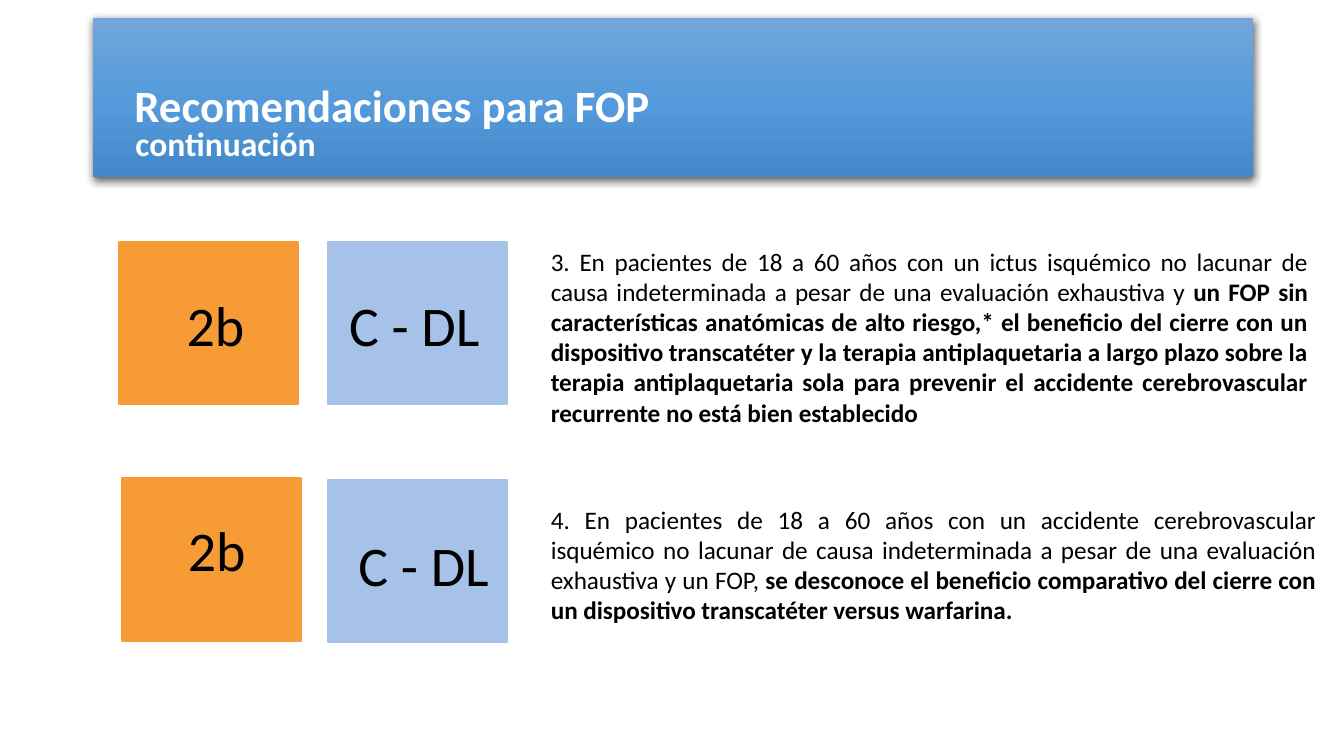
from lxml import etree
from pptx import Presentation
from pptx.dml.color import RGBColor
from pptx.enum.shapes import MSO_SHAPE
from pptx.enum.text import MSO_ANCHOR, MSO_AUTO_SIZE, PP_ALIGN
from pptx.oxml import parse_xml
from pptx.util import Pt

RECTANGLE = MSO_SHAPE.RECTANGLE
TOP = MSO_ANCHOR.TOP
NO_AUTOFIT = MSO_AUTO_SIZE.NONE
LEFT, JUSTIFY = PP_ALIGN.LEFT, PP_ALIGN.JUSTIFY

FONT = "Calibri"
WHITE = RGBColor(0xFF, 0xFF, 0xFF)
BLACK = RGBColor(0, 0, 0)
ORANGE = RGBColor(0xF7, 0x9B, 0x36)
LIGHT_BLUE = RGBColor(0xA6, 0xC2, 0xE9)
BANNER_STOPS = [
    (0, RGBColor(0x71, 0xA6, 0xDB)),
    (50, RGBColor(0x55, 0x9B, 0xDB)),
    (100, RGBColor(0x44, 0x8A, 0xCA)),
]
DRAWING = "http://schemas.openxmlformats.org/drawingml/2006/main"

BADGE_WIDTH, BADGE_HEIGHT = 95.8, 87.1
LEVEL_LEFT, TEXT_LEFT = 175.7, 288

# Offsets are measured from the top left of each recommendation
RECOMMENDATIONS = [
    dict(
        box=(64, 129.6, 643.8, 105.1),
        grade_offset=(28.9, 22.3), level_offset=(116, 22.3),
        level_badge_drop=0, text_drop=-1.4,
        plain="3. En pacientes de 18 a 60 años con un ictus isquémico no lacunar de "
              "causa indeterminada a pesar de una evaluación exhaustiva y ",
        strong="un FOP sin características anatómicas de alto riesgo,* el beneficio del "
               "cierre con un dispositivo transcatéter y la terapia antiplaquetaria a "
               "largo plazo sobre la terapia antiplaquetaria sola para prevenir el "
               "accidente cerebrovascular recurrente no está bien establecido",
    ),
    dict(
        box=(65.5, 256.2, 646.6, 72.7),
        grade_offset=(28.1, 16.7), level_offset=(119.5, 24.6),
        level_badge_drop=0.8, text_drop=10.2,
        plain="4. En pacientes de 18 a 60 años con un accidente cerebrovascular "
              "isquémico no lacunar de causa indeterminada a pesar de una evaluación "
              "exhaustiva y un FOP, ",
        strong="se desconoce el beneficio comparativo del cierre con un dispositivo "
               "transcatéter versus warfarina.",
    ),
]


def place(shape, box):
    shape.left, shape.top, shape.width, shape.height = (Pt(v) for v in box)


def write(shape, runs, size, color=BLACK, align=LEFT):
    """Fill a shape with one paragraph of (text, bold) runs."""
    frame = shape.text_frame
    frame.word_wrap = True
    frame.auto_size = NO_AUTOFIT
    frame.vertical_anchor = TOP
    paragraph = frame.paragraphs[0]
    paragraph.alignment = align
    for text, bold in runs:
        run = paragraph.add_run()
        run.text = text
        run.font.name = FONT
        run.font.size = Pt(size)
        run.font.bold = bold
        run.font.color.rgb = color


def add_text(slide, box, runs, **style):
    write(slide.shapes.add_textbox(*(Pt(v) for v in box)), runs, **style)


def add_badge(slide, left, top, color):
    badge = slide.shapes.add_shape(
        RECTANGLE, Pt(left), Pt(top), Pt(BADGE_WIDTH), Pt(BADGE_HEIGHT))
    badge.shadow.inherit = False
    badge.fill.solid()
    badge.fill.fore_color.rgb = color
    badge.line.color.rgb = color
    badge.line.width = Pt(1)


def add_banner(slide, box):
    left, top, width, height = box
    banner = slide.shapes.add_shape(RECTANGLE, *(Pt(v) for v in box))
    banner.line.fill.background()
    banner.shadow.inherit = False

    # Three-stop vertical gradient
    stops = "".join(
        f'<a:gs pos="{pos * 1000}"><a:srgbClr val="{color}"/></a:gs>'
        for pos, color in BANNER_STOPS)
    properties = banner._element.spPr
    properties.find(f"{{{DRAWING}}}prstGeom").addnext(parse_xml(
        f'<a:gradFill xmlns:a="{DRAWING}" rotWithShape="1"><a:gsLst>{stops}</a:gsLst>'
        '<a:lin ang="5400000" scaled="0"/></a:gradFill>'))

    # Soft shadow below
    effects = properties.find(f"{{{DRAWING}}}effectLst")
    shadow = etree.SubElement(
        effects, f"{{{DRAWING}}}outerShdw", blurRad=str(Pt(4.5)),
        dist=str(Pt(1.5)), dir="5400000", algn="ctr", rotWithShape="0")
    black = etree.SubElement(shadow, f"{{{DRAWING}}}srgbClr", val=str(BLACK))
    etree.SubElement(black, f"{{{DRAWING}}}alpha", val="63000")

    # Title and subtitle, moved in front of the banner
    title = slide.shapes.title
    slide.shapes._spTree.append(title._element)
    place(title, (left + 15.1, top + 28.8, 336.2, 36))
    write(title, [("Recomendaciones para FOP", True)], size=24, color=WHITE)
    add_text(slide, (left + 15.8, top + 53.2, 336.2, 28.8),
             [("continuación", True)], size=18, color=WHITE)


def add_recommendation(slide, box, grade_offset, level_offset,
                       level_badge_drop, text_drop, plain, strong):
    left, top, width, height = box
    # Class and evidence badges
    add_badge(slide, left, top, ORANGE)
    add_badge(slide, LEVEL_LEFT, top + level_badge_drop, LIGHT_BLUE)
    for label, (dx, dy), label_width in (
            ("2b", grade_offset, 53.3), ("C - DL", level_offset, 133.9)):
        add_text(slide, (left + dx, top + dy, label_width, 43.9),
                 [(label, False)], size=30)
    # Statement
    add_text(slide, (TEXT_LEFT, top + text_drop, left + width - TEXT_LEFT, height),
             [(plain, False), (strong, True)], size=13.5, align=JUSTIFY)


def main():
    deck = Presentation()
    deck.slide_width, deck.slide_height = Pt(720), Pt(405)
    slide = deck.slides.add_slide(deck.slide_layouts[5])
    add_banner(slide, (49.7, 9.4, 621.4, 85.7))
    for recommendation in RECOMMENDATIONS:
        add_recommendation(slide, **recommendation)
    deck.save("out.pptx")


if __name__ == "__main__":
    main()
